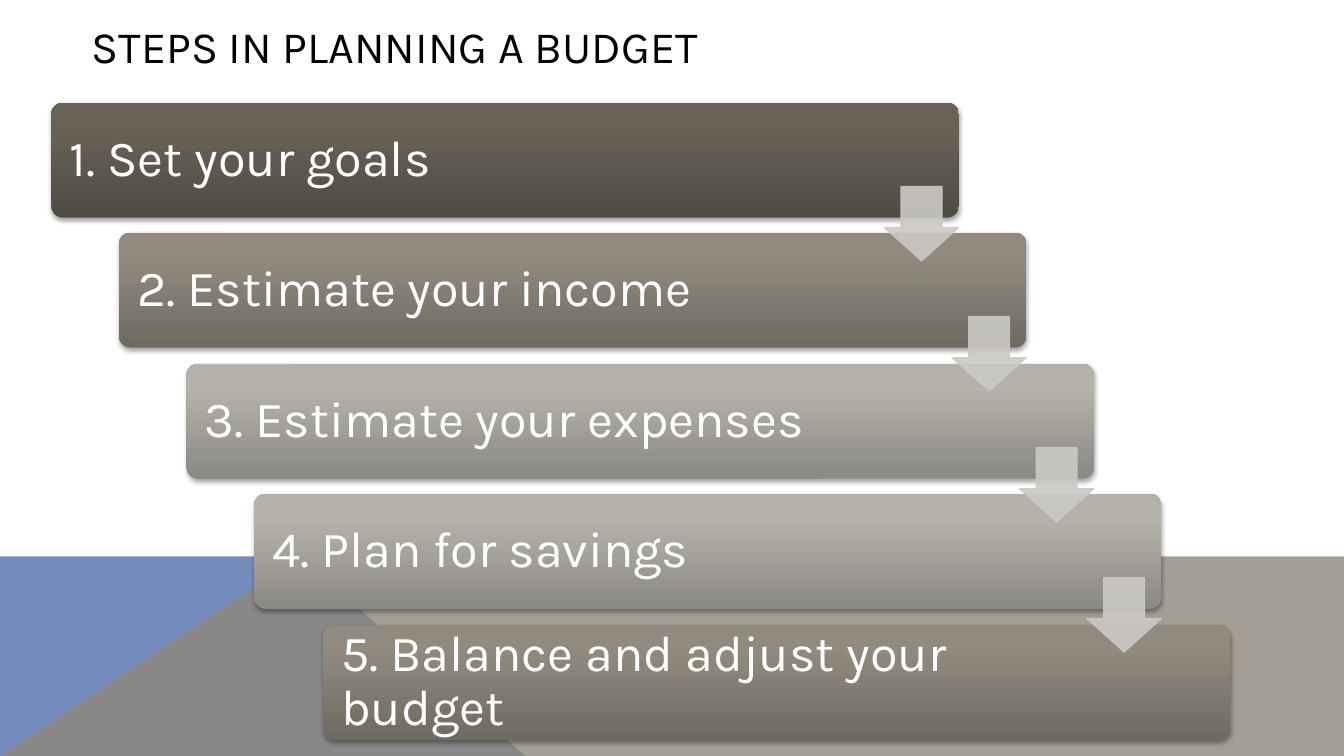
from copy import deepcopy

from lxml.etree import SubElement
from pptx import Presentation
from pptx.dml.color import RGBColor
from pptx.enum.shapes import MSO_SHAPE as SHAPE
from pptx.enum.text import MSO_ANCHOR as ANCHOR, MSO_AUTO_SIZE as AUTO, PP_ALIGN as ALIGN
from pptx.oxml.ns import qn
from pptx.util import Pt

PX = 9144  # 100 px to the inch
WIDTH, HEIGHT = 1333, 750
TITLE_ONLY = 5

BROWN = ("504C43", "686257", "696357")
OLIVE = ("6F6B62", "918B7F", "928B7F")
SILVER = ("8B8984", "B5B2AB", "B6B3AC")
STEPS = [
    ("1. Set your goals", BROWN),
    ("2. Estimate your income", OLIVE),
    ("3. Estimate your expenses", SILVER),
    ("4. Plan for savings", SILVER),
    ("5. Balance and adjust your budget", OLIVE),
]
BAR_W, BAR_H, ARROW = 900, 114, 74
ARROW_DROP = 83


def rgb(code):
    return RGBColor.from_string(code)


def set_all(obj, values):
    for name, value in values.items():
        setattr(obj, name, value)


def set_opacity(s, percent):
    for clr in s._element.spPr.iter(qn("a:srgbClr")):
        SubElement(clr, qn("a:alpha"), val=str(percent * 1000))


class Deck:
    font = "Karla"

    def __init__(self, prs):
        self.slide = prs.slides.add_slide(prs.slide_layouts[TITLE_ONLY])
        self.shapes = self.slide.shapes

    def put_text(self, s, text, size, color, **margins):
        tf = s.text_frame
        set_all(tf, {"word_wrap": True, "auto_size": AUTO.NONE,
                     "vertical_anchor": ANCHOR.MIDDLE, **margins})
        p = tf.paragraphs[0]
        set_all(p, {"alignment": ALIGN.LEFT, "line_spacing": 0.9})
        r = p.add_run()
        r.text = text
        set_all(r.font, {"name": self.font, "size": Pt(size)})
        r.font.color.rgb = rgb(color)

    def title(self, text, x, y, w, h):
        s = self.shapes.title
        set_all(s, {"left": x * PX, "top": y * PX, "width": w * PX, "height": h * PX})
        self.put_text(s, text, 32, "000000")

    def polygon(self, points, color, opacity=100):
        builder = self.shapes.build_freeform(*points[0], scale=PX)
        builder.add_line_segments(points[1:], close=True)
        s = builder.convert_to_shape()
        s.shadow.inherit = False
        s.fill.solid()
        s.fill.fore_color.rgb = rgb(color)
        s.line.fill.background()
        if opacity < 100:
            set_opacity(s, opacity)

    def shape(self, kind, x, y, w, h, adjustments):
        s = self.shapes.add_shape(kind, x * PX, y * PX, w * PX, h * PX)
        s.shadow.inherit = False
        for i, value in enumerate(adjustments):
            s.adjustments[i] = value
        return s

    def bar(self, text, colors, x, y):
        s = self.shape(SHAPE.ROUNDED_RECTANGLE, x, y, BAR_W, BAR_H, [0.1])
        s.line.fill.background()
        self.gradient(s, colors)
        self.drop_shadow(s)
        self.put_text(s, text, 36, "FFFFFF", margin_left=15 * PX, margin_right=160 * PX,
                      margin_top=15 * PX, margin_bottom=15 * PX)

    def gradient(self, s, colors):
        """Fill from bottom to top, with the middle colour at 80%."""
        s.fill.gradient()
        s.fill.gradient_angle = 90
        stops = s._element.spPr.find(".//" + qn("a:gsLst"))
        stops.insert(1, deepcopy(stops[0]))
        for stop, color, position in zip(s.fill.gradient_stops, colors, (0, 0.8, 1)):
            stop.color.rgb = rgb(color)
            stop.position = position

    def drop_shadow(self, s):
        effects = s._element.spPr.find(qn("a:effectLst"))
        shadow = SubElement(effects, qn("a:outerShdw"), blurRad=str(Pt(3.1)),
                            dist=str(Pt(1.8)), dir="5400000", rotWithShape="0")
        clr = SubElement(shadow, qn("a:srgbClr"), val="000000")
        SubElement(clr, qn("a:alpha"), val="35000")

    def arrow(self, x, y):
        s = self.shape(SHAPE.DOWN_ARROW, x, y, ARROW, ARROW, [0.55, 0.45])
        s.fill.solid()
        s.fill.fore_color.rgb = rgb("CBC9C5")
        s.line.color.rgb = rgb("CBC9C5")
        s.line.width = Pt(0.75)
        set_opacity(s, 90)


def main():
    prs = Presentation()
    set_all(prs, {"slide_width": WIDTH * PX, "slide_height": HEIGHT * PX})
    deck = Deck(prs)
    deck.polygon([(0, HEIGHT), (0, 552), (298, 552), (521, HEIGHT)], "748CBC")
    deck.polygon([(0, HEIGHT), (297, 552), (WIDTH, 552), (WIDTH, HEIGHT)], "8E887C", 80)
    deck.title("STEPS IN PLANNING A BUDGET", 81, 19, 1097, 60)

    # Each step moves 67.25 px right and 129.5 px down
    corners = [(51 + 269 * i // 4, 102 + 259 * i // 2) for i in range(len(STEPS))]
    for (text, colors), (x, y) in zip(STEPS, corners):
        deck.bar(text, colors, x, y)
    for x, y in corners[:-1]:
        deck.arrow(x + BAR_W - ARROW, y + ARROW_DROP)
    prs.save("out.pptx")


if __name__ == "__main__":
    main()
